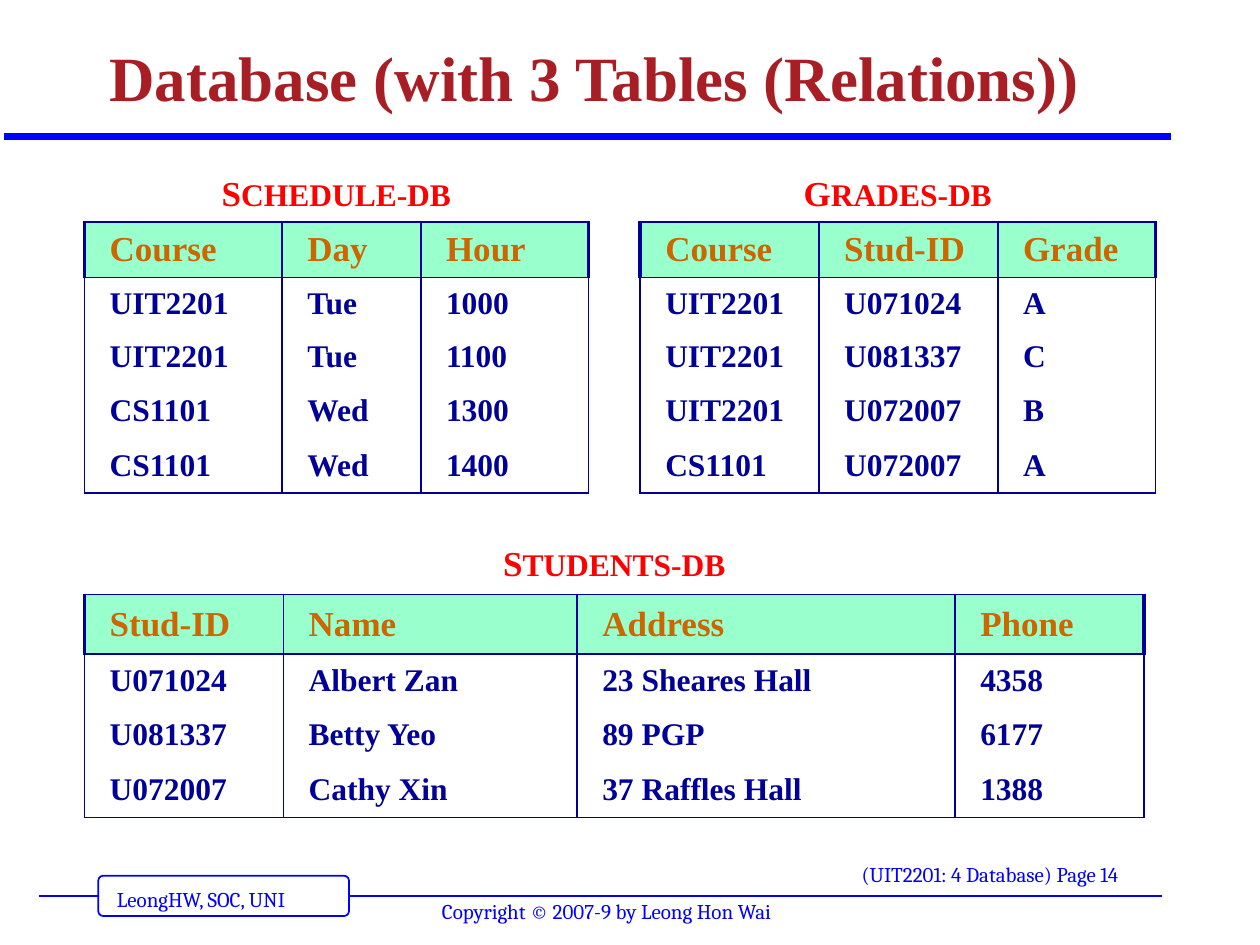
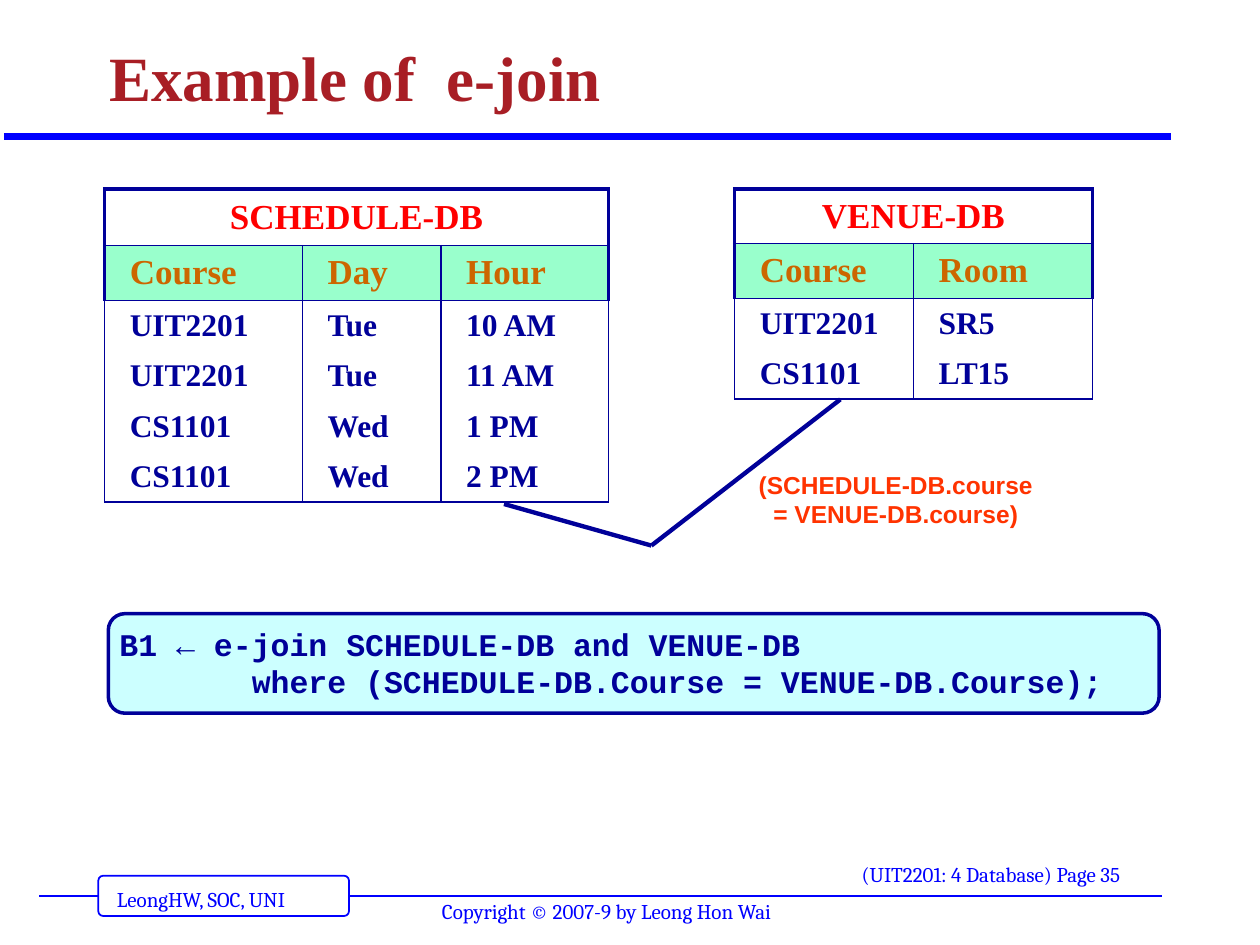
from dataclasses import dataclass

from lxml import etree
from pptx import Presentation, util as u
from pptx.dml.color import RGBColor
from pptx.enum import shapes, text
from pptx.oxml.ns import qn


@dataclass(frozen=True)
class Theme:
    white: str = "FFFFFF"
    title: str = "A81E25"
    rule: str = "0000FF"
    navy: str = "000099"
    heading: str = "FF0000"
    column: str = "CC6600"
    header_fill: str = "99FFCC"
    code_fill: str = "CCFFFF"
    condition: str = "FF3300"
    serif: str = "Times New Roman"
    footer_font: str = "Cambria"
    sans: str = "Arial"
    mono: str = "Courier New"
    title_size: float = 36
    heading_size: float = 20
    body_size: float = 18
    condition_size: float = 14
    footer_size: float = 12
    thin: float = 1
    thick: float = 2.25


THEME = Theme()

FOOTERS = [  # left, top, width, text
    (0.83, 6.99, 1.82, "LeongHW, SOC, UNI"),
    (6.74, 6.79, 2.49, "(UIT2201: 4 Database) Page {page}"),
    (3.41, 7.08, 3.07, "Copyright © 2007-9 by Leong Hon Wai"),
]

# A framed table has a border around its heading; otherwise the heading
# stands free above the grid and starts with a larger capital.
SLIDES = [
    {
        "title": "Database (with 3 Tables (Relations))",
        "page": 14,
        "tables": [
            {
                "heading": "SCHEDULE-DB", "framed": False, "at": (0.67, 1.33),
                "widths": [1.57, 1.1, 1.33],
                "heights": [0.43, 0.44, 0.41, 0.43, 0.44, 0.43],
                "rows": [
                    ("Course", "Day", "Hour"),
                    ("UIT2201", "Tue", "1000"),
                    ("UIT2201", "Tue", "1100"),
                    ("CS1101", "Wed", "1300"),
                    ("CS1101", "Wed", "1400"),
                ],
            },
            {
                "heading": "GRADES-DB", "framed": False, "at": (5.08, 1.33),
                "widths": [1.42, 1.42, 1.25],
                "heights": [0.43, 0.44, 0.41, 0.43, 0.44, 0.43],
                "rows": [
                    ("Course", "Stud-ID", "Grade"),
                    ("UIT2201", "U071024", "A"),
                    ("UIT2201", "U081337", "C"),
                    ("UIT2201", "U072007", "B"),
                    ("CS1101", "U072007", "A"),
                ],
            },
            {
                "heading": "STUDENTS-DB", "framed": False, "at": (0.67, 4.25),
                "widths": [1.58, 2.33, 3, 1.5],
                "heights": [0.47, 0.47, 0.42, 0.44, 0.44],
                "rows": [
                    ("Stud-ID", "Name", "Address", "Phone"),
                    ("U071024", "Albert Zan", "23 Sheares Hall", "4358"),
                    ("U081337", "Betty Yeo", "89 PGP", "6177"),
                    ("U072007", "Cathy Xin", "37 Raffles Hall", "1388"),
                ],
            },
        ],
    },
    {
        "title": "Example of  e-join",
        "page": 35,
        "tables": [
            {
                "heading": "SCHEDULE-DB", "framed": True, "at": (0.83, 1.5),
                "widths": [1.57, 1.1, 1.33],
                "heights": [0.45, 0.41, 0.38, 0.4, 0.38, 0.4],
                "rows": [
                    ("Course", "Day", "Hour"),
                    ("UIT2201", "Tue", "10 AM"),
                    ("UIT2201", "Tue", "11 AM"),
                    ("CS1101", "Wed", "1 PM"),
                    ("CS1101", "Wed", "2 PM"),
                ],
            },
            {
                "heading": "VENUE-DB", "framed": True, "at": (5.83, 1.5),
                "widths": [1.42, 1.42],
                "heights": [0.39, 0.39, 0.36, 0.39],
                "rows": [
                    ("Course", "Room"),
                    ("UIT2201", "SR5"),
                    ("CS1101", "LT15"),
                ],
            },
        ],
    },
]

JOIN_CONDITION = ["(SCHEDULE-DB.course", "= VENUE-DB.course)"]
JOIN_CODE = [
    "B1 ← e-join SCHEDULE-DB and VENUE-DB",
    "where (SCHEDULE-DB.Course = VENUE-DB.Course);",
]
JOIN_POINT = (5.17, 4.33)
JOIN_STARTS = [(6.67, 3.17), (4, 4)]
CODE_INDENT = 1.05


def color(value):
    return RGBColor.from_string(value)


def style(para, size, font, ink, bold=True):
    para.font.size = u.Pt(size)
    para.font.name = font
    para.font.bold = bold
    para.font.color.rgb = color(ink)


def set_margins(frame, side, end=0.05):
    frame.margin_left = frame.margin_right = u.Inches(side)
    frame.margin_top = frame.margin_bottom = u.Inches(end)


def write_lines(frame, lines, *look):
    """Put each line in its own styled paragraph and return the paragraphs."""
    frame.word_wrap = True
    for index, line in enumerate(lines):
        para = frame.add_paragraph() if index else frame.paragraphs[0]
        para.text = line
        style(para, *look)
    return frame.paragraphs


def add_text(slide, at, lines, *look, side=0.1):
    frame = slide.shapes.add_textbox(*map(u.Inches, at)).text_frame
    set_margins(frame, side)
    write_lines(frame, lines, *look)
    return frame


def add_line(slide, start, end, ink, width):
    line = slide.shapes.add_connector(
        shapes.MSO_CONNECTOR.STRAIGHT, *map(u.Inches, start + end))
    line.line.color.rgb = color(ink)
    line.line.width = u.Pt(width)
    etree.SubElement(line._element.spPr, qn("a:effectLst"))


def add_round_box(slide, at, corner, fill, ink, width):
    box = slide.shapes.add_shape(
        shapes.MSO_SHAPE.ROUNDED_RECTANGLE, *map(u.Inches, at))
    box.adjustments[0] = corner
    box.shadow.inherit = False
    box.fill.solid()
    box.fill.fore_color.rgb = color(fill)
    box.line.color.rgb = color(ink)
    box.line.width = u.Pt(width)
    return box


def set_borders(cell, left, right, top, bottom):
    """Draw the four edges at the given point widths; 0 means no edge."""
    properties = cell._tc.get_or_add_tcPr()
    for side, width in zip("LRTB", (left, right, top, bottom)):
        edge = etree.SubElement(properties, qn(f"a:ln{side}"))
        if width:
            edge.set("w", str(u.Pt(width)))
            fill = etree.SubElement(edge, qn("a:solidFill"))
            etree.SubElement(fill, qn("a:srgbClr"), val=THEME.navy)
        else:
            etree.SubElement(edge, qn("a:noFill"))


def write_heading(cell, heading, framed):
    para = cell.text_frame.paragraphs[0]
    para.alignment = text.PP_ALIGN.CENTER
    size = THEME.heading_size if framed else THEME.body_size
    style(para, size, THEME.serif, THEME.heading)
    for part in [heading] if framed else [heading[0], heading[1:]]:
        para.add_run().text = part
    para.runs[0].font.size = u.Pt(THEME.heading_size)


def add_relation(slide, heading, framed, at, widths, heights, rows):
    """Add a table with a merged heading, a header row and body rows."""
    table = slide.shapes.add_table(
        len(heights), len(widths),
        *map(u.Inches, (*at, sum(widths), sum(heights)))).table
    table.first_row = table.horz_banding = False
    for column, width in zip(table.columns, widths):
        column.width = u.Inches(width)
    for row, height in zip(table.rows, heights):
        row.height = u.Inches(height)
    last_row, last_column = len(heights) - 1, len(widths) - 1
    table.cell(0, 0).merge(table.cell(0, last_column))
    write_heading(table.cell(0, 0), heading, framed)

    thin, thick = THEME.thin, THEME.thick
    for r in range(last_row + 1):
        for c in range(last_column + 1):
            cell = table.cell(r, c)
            set_margins(cell, 0.2)
            cell.vertical_anchor = text.MSO_ANCHOR.MIDDLE
            if r == 0:
                frame = thick if framed else 0
                set_borders(cell, frame, frame, frame, thin)
            elif r == 1:
                set_borders(cell, thin if c else thick,
                            thick if c == last_column else thin, thin, thin)
            else:
                set_borders(cell, thin, thin, thin if r == 2 else 0,
                            thin if r == last_row else 0)
            if r == 1:
                cell.fill.solid()
                cell.fill.fore_color.rgb = color(THEME.header_fill)
            else:
                cell.fill.background()
            if r:
                look = ((THEME.heading_size, THEME.serif, THEME.column)
                        if r == 1 else
                        (THEME.body_size, THEME.serif, THEME.navy))
                write_lines(cell.text_frame, [rows[r - 1][c]], *look)


def add_page(deck, title, page, tables):
    slide = deck.slides.add_slide(deck.slide_layouts[6])
    add_line(slide, (0.31, 7.11), (9.22, 7.11), THEME.rule, 1)
    add_round_box(slide, (0.78, 6.95, 1.99, 0.32), 0.125,
                  THEME.white, THEME.rule, 1)
    add_line(slide, (0.03, 1.08), (9.29, 1.08), THEME.rule, 4)
    for left, top, width, words in FOOTERS:
        add_text(slide, (left, top, width, 0.3), [words.format(page=page)],
                 THEME.footer_size, THEME.footer_font, THEME.rule, False)
    frame = add_text(slide, (0.77, 0.08, 8.5, 0.88), [title],
                     THEME.title_size, THEME.serif, THEME.title)
    frame.vertical_anchor = text.MSO_ANCHOR.BOTTOM
    frame.paragraphs[0].line_spacing = 0.9
    for table in tables:
        add_relation(slide, **table)
    return slide


def add_join(slide):
    condition = add_text(slide, (5.58, 3.68, 3.06, 0.57), JOIN_CONDITION,
                         THEME.condition_size, THEME.sans, THEME.condition,
                         side=0.2)
    for para in condition.paragraphs:
        para.alignment = text.PP_ALIGN.CENTER

    box = add_round_box(slide, (0.86, 4.87, 8.34, 0.79), 0.167,
                        THEME.code_fill, THEME.navy, 2)
    frame = box.text_frame
    set_margins(frame, 0.05)
    frame.vertical_anchor = text.MSO_ANCHOR.TOP
    first, second = write_lines(frame, JOIN_CODE, THEME.body_size,
                                THEME.mono, THEME.navy)
    first.alignment = second.alignment = text.PP_ALIGN.LEFT
    first.space_before = u.Pt(1.8)
    second._p.get_or_add_pPr().set("marL", str(u.Inches(CODE_INDENT)))

    for start in JOIN_STARTS:
        add_line(slide, start, JOIN_POINT, THEME.navy, 2.5)


def main():
    deck = Presentation()
    deck.slide_width, deck.slide_height = u.Inches(10), u.Inches(7.5)
    database, join = [add_page(deck, **content) for content in SLIDES]
    add_join(join)
    deck.save("out.pptx")


if __name__ == "__main__":
    main()
